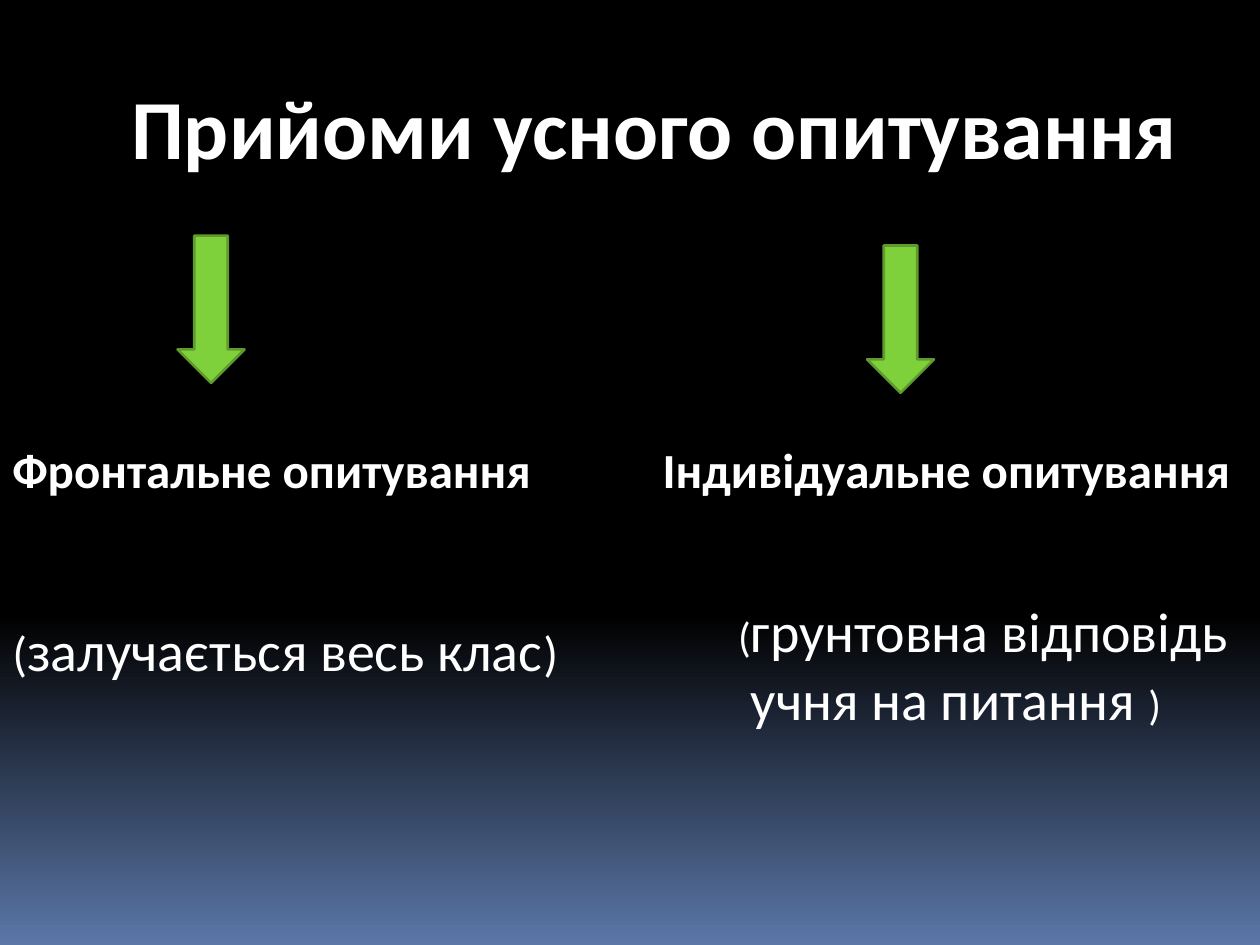
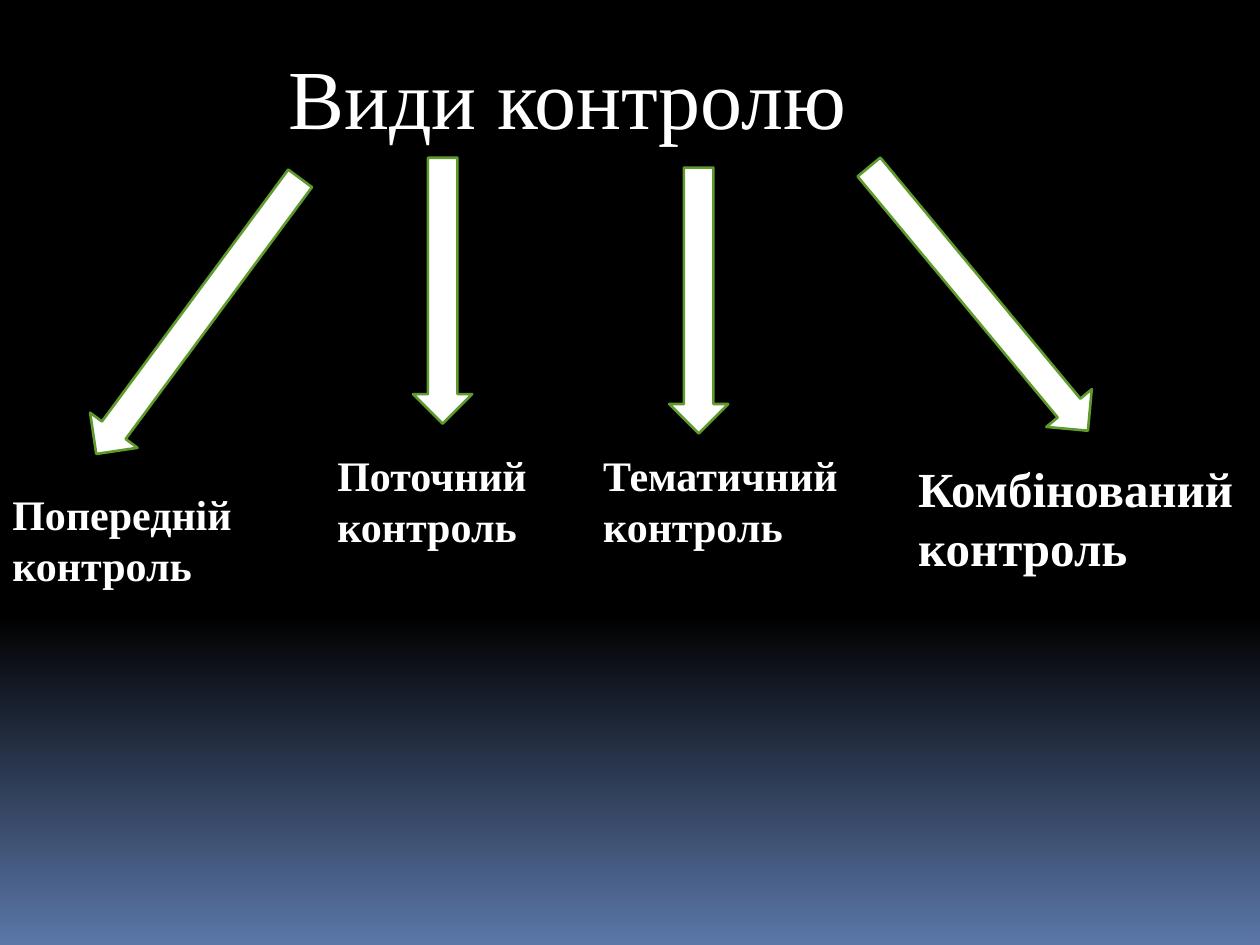
from pptx import Presentation
from pptx.dml.color import RGBColor
from pptx.enum import shapes, text
from pptx.util import Cm, Pt

WHITE, GREEN, DARK_GREEN = "FFFFFF", "7FD13B", "5E9B2C"
NIGHT, DUSK = "000000", "5B77A8"
SANS, SERIF = "Calibri", "Times New Roman"


def rgb(value):
    return RGBColor.from_string(value)


def set_background(master):
    """Black down to 65 % of the height, then fading to blue."""
    fill = master.background.fill
    fill.gradient()
    fill.gradient_angle = 270
    for stop, position, colour in zip(fill.gradient_stops, (0.65, 1), (NIGHT, DUSK)):
        stop.position = position
        stop.color.rgb = rgb(colour)


def format_run(r, font, size, bold=False):
    r.font.name, r.font.size, r.font.bold = font, Pt(size), bold
    r.font.color.rgb = rgb(WHITE)


def fit_frame(tf, wrap):
    tf.word_wrap = wrap
    tf.auto_size = text.MSO_AUTO_SIZE.SHAPE_TO_FIT_TEXT
    tf.vertical_anchor = text.MSO_ANCHOR.TOP


def add_title(s, words, box, font, bold=False):
    title = s.shapes.title
    title.left, title.top, title.width, title.height = map(Cm, box)
    tf = title.text_frame
    tf.text = words
    fit_frame(tf, wrap=False)
    p = tf.paragraphs[0]
    p.alignment = text.PP_ALIGN.LEFT
    format_run(p.runs[0], font, 48, bold)


def add_text(s, box, lines, font, bold=False, wrap=False):
    """Each line is a list of (words, size) pairs."""
    tf = s.shapes.add_textbox(*map(Cm, box)).text_frame
    fit_frame(tf, wrap)
    for i, line in enumerate(lines):
        p = tf.add_paragraph() if i else tf.paragraphs[0]
        for words, size in line:
            r = p.add_run()
            r.text = words
            format_run(r, font, size, bold)


def add_arrow(s, box, colour, rotation=0):
    sp = s.shapes.add_shape(shapes.MSO_SHAPE.DOWN_ARROW, *map(Cm, box))
    sp.shadow.inherit = False
    sp.rotation = rotation
    sp.fill.solid()
    sp.fill.fore_color.rgb = rgb(colour)
    sp.line.color.rgb = rgb(DARK_GREEN)
    sp.line.width = Pt(1.5)


def add_technique(s, box, arrow_at, label, note_box, note):
    """Arrow, bold label and note; arrow and note are offset from the label."""
    left, top, _, _ = box
    dx, dy = arrow_at
    add_arrow(s, (left + dx, top + dy, 1.35, 2.97), GREEN)
    add_text(s, box, [[(label, 28)]], SANS, bold=True)
    dx, dy, width, height = note_box
    add_text(s, (left + dx, top + dy, width, height), note, SANS)


def add_control(s, box, label, size, arrow_at, length, rotation=0):
    """Bold label with the arrow that leads to it from the title."""
    left, top, _, _ = box
    dx, dy = arrow_at
    add_text(s, box, [[(label, size)]], SERIF, bold=True, wrap=True)
    add_arrow(s, (left + dx, top + dy, 1.19, length), WHITE, rotation)


def build_techniques(s):
    add_title(s, "Прийоми усного опитування", (2.39, 1.4, 22.4, 2.31), SANS, bold=True)
    add_technique(s, (0, 8.74, 11.4, 1.45), (3.58, -3.99), "Фронтальне опитування",
                  (0, 3.55, 11.89, 1.63),
                  [[("(", 28), ("залучається весь клас", 32), (")", 28)]])
    add_technique(s, (13.11, 8.74, 12.29, 1.45), (4.37, -3.79), "Індивідуальне опитування",
                  (1.52, 3.17, 10.77, 3),
                  [[("(", 24), ("грунтовна відповідь", 32)],
                   [(" учня на питання ", 32), (")", 24)]])


def build_controls(s):
    add_title(s, "Види контролю", (5.56, 0.79, 11.99, 2.31), SERIF)
    slanted, straight = 6.91, 5.36
    add_control(s, (0, 9.73, 4.95, 2.31), "Попередній контроль", 24,
                (3.4, -6.81), slanted, 36.5)
    add_control(s, (6.55, 8.94, 5.16, 2.31), "Поточний контроль", 24,
                (1.78, -5.76), straight)
    add_control(s, (11.91, 8.94, 5.77, 2.39), "Тематичний контроль", 24,
                (1.58, -5.56), straight)
    add_control(s, (18.26, 9.12, 7.14, 2.64), "Комбінований контроль", 28,
                (0.87, -6.55), slanted, 320.3)


def main():
    prs = Presentation()
    prs.slide_width, prs.slide_height = Cm(25.4), Cm(19.05)
    set_background(prs.slide_master)
    title_only = prs.slide_layouts[5]
    for build in (build_techniques, build_controls):
        build(prs.slides.add_slide(title_only))
    prs.save("out.pptx")


if __name__ == "__main__":
    main()
